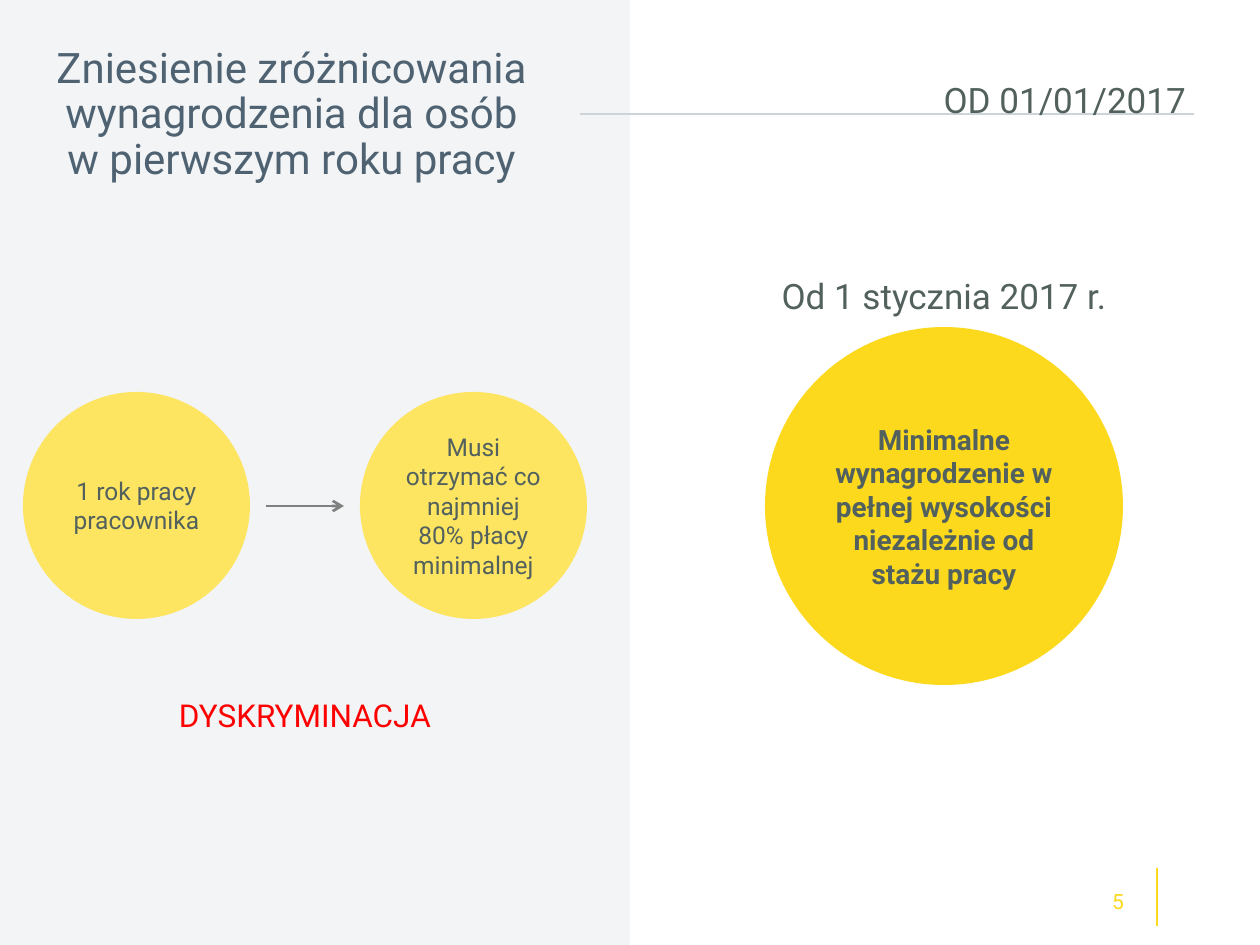
import pptx
import pptx.util
import pptx.dml.color
import pptx.enum.shapes
import pptx.enum.text
import pptx.oxml.ns
from lxml import etree

SHAPE = pptx.enum.shapes.MSO_SHAPE
ALIGN = pptx.enum.text.PP_ALIGN
ANCHOR = pptx.enum.text.MSO_ANCHOR
FONT = "Roboto"
TEXT = "52615D"
YELLOW = "FCD91D"
PALE_YELLOW = "FDE461"


def px(n):
    return pptx.util.Emu(round(n * 914400 / 126))


def color(value):
    return pptx.dml.color.RGBColor.from_string(value)


def write(tf, text, size=20, fill=TEXT, bold=False, align=ALIGN.CENTER,
          anchor=ANCHOR.TOP, spacing=None, margin=12):
    tf.word_wrap = True
    tf.vertical_anchor = anchor
    tf.margin_left = tf.margin_right = px(margin)
    tf.margin_top = tf.margin_bottom = px(6)
    p = tf.paragraphs[0]
    p.alignment = align
    if spacing:
        p.line_spacing = spacing
    r = p.add_run()
    r.text = text
    r.font.name = FONT
    r.font.size = pptx.util.Pt(size)
    r.font.bold = bold
    r.font.color.rgb = color(fill)


def add_text(s, x, y, w, h, text, **style):
    box = s.shapes.add_textbox(px(x), px(y), px(w), px(h))
    write(box.text_frame, text, **style)


def add_shape(s, kind, x, y, w, h, fill):
    sp = s.shapes.add_shape(kind, px(x), px(y), px(w), px(h))
    sp.shadow.inherit = False
    sp.fill.solid()
    sp.fill.fore_color.rgb = color(fill)
    sp.line.fill.background()
    return sp


def add_circle(s, x, y, d, fill, text, **style):
    sp = add_shape(s, SHAPE.OVAL, x, y, d, d, fill)
    write(sp.text_frame, text, anchor=ANCHOR.MIDDLE, margin=10, **style)


def add_line(s, x1, y1, x2, y2, stroke, width, arrow=False):
    line = s.shapes.add_connector(
        pptx.enum.shapes.MSO_CONNECTOR.STRAIGHT, px(x1), px(y1), px(x2), px(y2))
    line.line.color.rgb = color(stroke)
    line.line.width = pptx.util.Pt(width)
    qn = pptx.oxml.ns.qn
    if arrow:
        etree.SubElement(line.line._get_or_add_ln(), qn("a:tailEnd"), type="arrow")
    etree.SubElement(line._element.spPr, qn("a:effectLst"))


def main():
    prs = pptx.Presentation()
    prs.slide_width, prs.slide_height = px(1260), px(945)
    s = prs.slides.add_slide(prs.slide_layouts[6])

    add_line(s, 1157, 868, 1157, 926, YELLOW, 1.5)
    add_shape(s, SHAPE.RECTANGLE, 0, 0, 630, 945, "F2F4F6")
    add_line(s, 580, 114, 1194, 114, "CCD4D9", 0.75)
    add_text(s, 889, 876, 247, 50, "5", size=12, fill=YELLOW,
             align=ALIGN.RIGHT, anchor=ANCHOR.MIDDLE)

    steps = ["1 rok pracy pracownika",
             "Musi otrzymać co najmniej 80% płacy minimalnej"]
    for i, step in enumerate(steps):
        add_circle(s, 23 + 337 * i, 392, 227, PALE_YELLOW, step, size=14)
    add_line(s, 266, 506, 344, 506, "808080", 1.5, arrow=True)

    add_text(s, 42, 48, 499, 134,
             "Zniesienie zróżnicowania wynagrodzenia dla osób w pierwszym roku pracy",
             size=24, fill="4F6272", anchor=ANCHOR.MIDDLE, spacing=0.9)
    add_text(s, 748, 77, 450, 33, "OD 01/01/2017", align=ALIGN.RIGHT, spacing=0.9)
    add_text(s, 164, 690, 282, 50, "DYSKRYMINACJA", size=18, fill="FF0000")
    add_circle(s, 765, 327, 358, YELLOW,
               "Minimalne wynagrodzenie w pełnej wysokości niezależnie od stażu pracy",
               size=16, bold=True)
    add_text(s, 719, 273, 450, 33, "Od 1 stycznia 2017 r.", spacing=0.9)

    prs.save("out.pptx")


if __name__ == "__main__":
    main()
